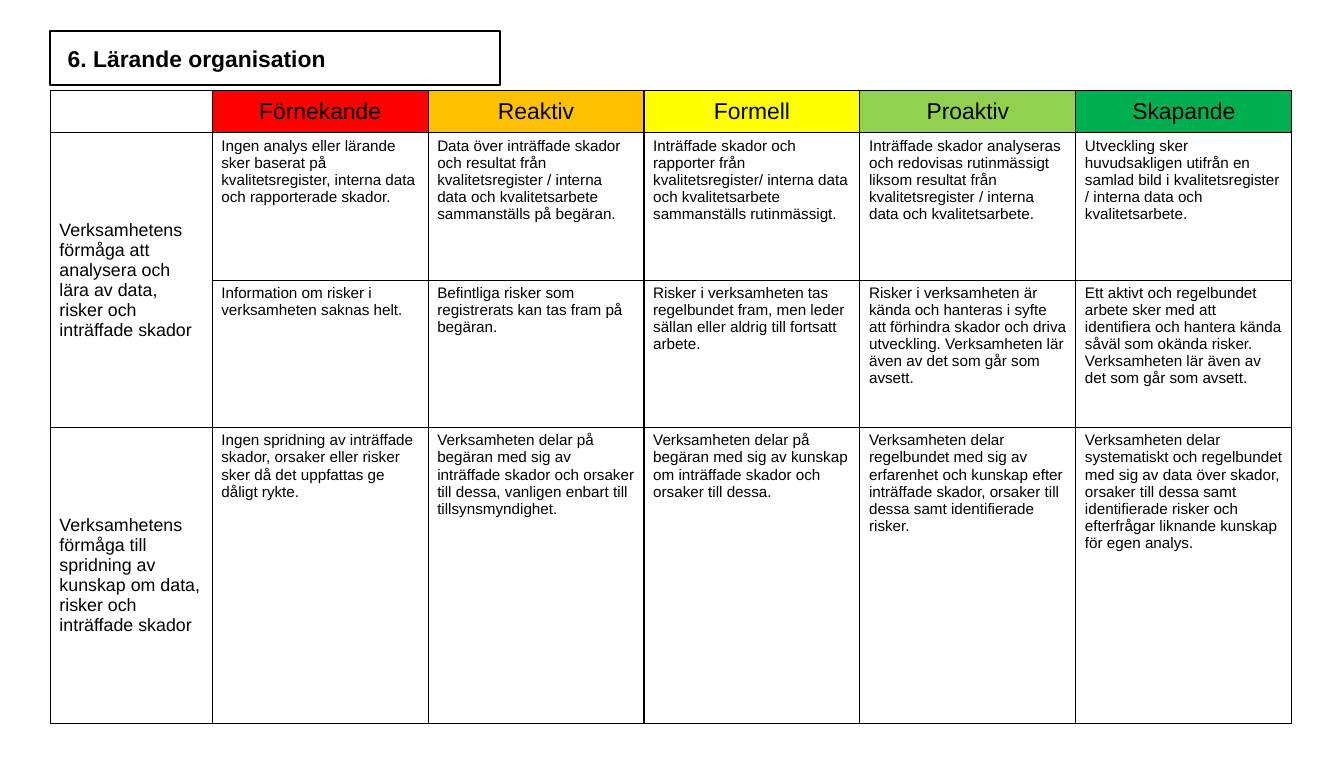
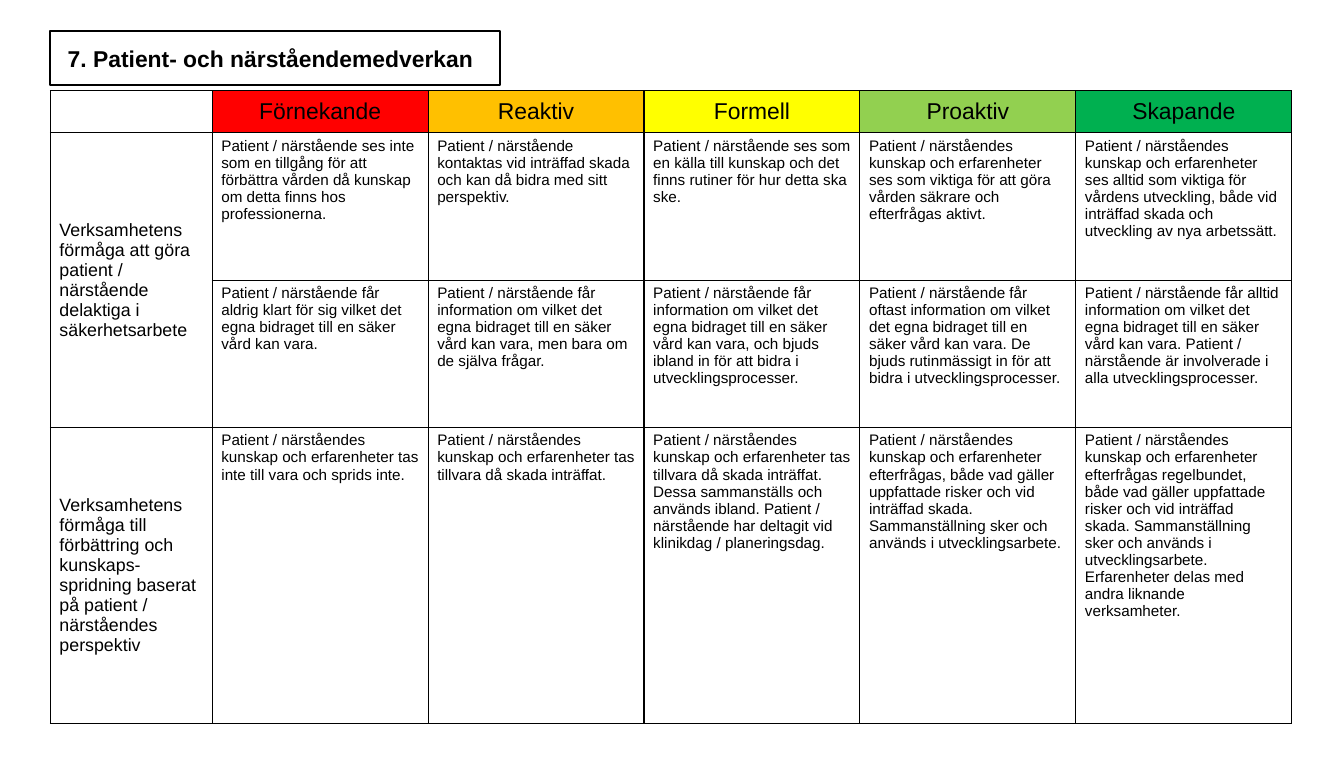
from dataclasses import dataclass

from lxml.etree import SubElement
from pptx import Presentation
from pptx.dml.color import RGBColor
from pptx.enum.shapes import MSO_SHAPE
from pptx.enum.text import MSO_ANCHOR, PP_ALIGN
from pptx.oxml.ns import qn
from pptx.util import Inches, Pt


@dataclass(frozen=True)
class Theme:
    font: str = "Arial"
    ink: str = "000000"
    paper: str = "FFFFFF"
    heading_size: int = 18
    label_size: int = 14
    body_size: int = 12
    title_line: float = 1.5
    grid_line: int = 1


THEME = Theme()
LEFT = Inches(0.55)
LEVELS = [
    ("Förnekande", "FF0000"),
    ("Reaktiv", "FFC000"),
    ("Formell", "FFFF00"),
    ("Proaktiv", "92D050"),
    ("Skapande", "00B050"),
]
COLUMN_WIDTHS = [1.77] + [2.36] * len(LEVELS)
ROW_HEIGHTS = [0.46, 1.61, 1.61, 3.23]
LABEL_ROWS = [1, 3]

PAGES = [
    {
        "title": "6. Lärande organisation",
        "labels": [
            "Verksamhetens förmåga att analysera och lära av data, risker och inträffade skador",
            "Verksamhetens förmåga till spridning av kunskap om data, risker och inträffade skador",
        ],
        "answers": [
            [
                "Ingen analys eller lärande sker baserat på kvalitetsregister, interna data och rapporterade skador.",
                "Data över inträffade skador och resultat från kvalitetsregister / interna data och kvalitetsarbete sammanställs på begäran.",
                "Inträffade skador och rapporter från kvalitetsregister/ interna data och kvalitetsarbete sammanställs rutinmässigt.",
                "Inträffade skador analyseras och redovisas rutinmässigt liksom resultat från kvalitetsregister / interna data och kvalitetsarbete.",
                "Utveckling sker huvudsakligen utifrån en samlad bild i kvalitetsregister / interna data och kvalitetsarbete.",
            ],
            [
                "Information om risker i verksamheten saknas helt.",
                "Befintliga risker som registrerats kan tas fram på begäran.",
                "Risker i verksamheten tas regelbundet fram, men leder sällan eller aldrig till fortsatt arbete.",
                "Risker i verksamheten är kända och hanteras i syfte att förhindra skador och driva utveckling. Verksamheten lär även av det som går som avsett.",
                "Ett aktivt och regelbundet arbete sker med att identifiera och hantera kända såväl som okända risker. Verksamheten lär även av det som går som avsett.",
            ],
            [
                "Ingen spridning av inträffade skador, orsaker eller risker sker då det uppfattas ge dåligt rykte.",
                "Verksamheten delar på begäran med sig av inträffade skador och orsaker till dessa, vanligen enbart till tillsynsmyndighet.",
                "Verksamheten delar på begäran med sig av kunskap om inträffade skador och orsaker till dessa.",
                "Verksamheten delar regelbundet med sig av erfarenhet och kunskap efter inträffade skador, orsaker till dessa samt identifierade risker.",
                "Verksamheten delar systematiskt och regelbundet med sig av data över skador, orsaker till dessa samt identifierade risker och efterfrågar liknande kunskap för egen analys.",
            ],
        ],
    },
    {
        "title": "7. Patient- och närståendemedverkan",
        "labels": [
            "Verksamhetens förmåga att göra patient / närstående delaktiga i säkerhetsarbete",
            "Verksamhetens förmåga till förbättring och kunskaps-spridning baserat på patient / närståendes perspektiv",
        ],
        "answers": [
            [
                "Patient / närstående ses inte som en tillgång för att förbättra vården då kunskap om detta finns hos professionerna.",
                "Patient / närstående kontaktas vid inträffad skada och kan då bidra med sitt perspektiv.",
                "Patient / närstående ses som en källa till kunskap och det finns rutiner för hur detta ska ske.",
                "Patient / närståendes kunskap och erfarenheter ses som viktiga för att göra vården säkrare och efterfrågas aktivt.",
                "Patient / närståendes kunskap och erfarenheter ses alltid som viktiga för vårdens utveckling, både vid inträffad skada och utveckling av nya arbetssätt.",
            ],
            [
                "Patient / närstående får aldrig klart för sig vilket det egna bidraget till en säker vård kan vara.",
                "Patient / närstående får information om vilket det egna bidraget till en säker vård kan vara, men bara om de själva frågar.",
                "Patient / närstående får information om vilket det egna bidraget till en säker vård kan vara, och bjuds ibland in för att bidra i utvecklingsprocesser.",
                "Patient / närstående får oftast information om vilket det egna bidraget till en säker vård kan vara. De bjuds rutinmässigt in för att bidra i utvecklingsprocesser.",
                "Patient / närstående får alltid information om vilket det egna bidraget till en säker vård kan vara. Patient / närstående är involverade i alla utvecklingsprocesser.",
            ],
            [
                "Patient / närståendes kunskap och erfarenheter tas inte till vara och sprids inte.",
                "Patient / närståendes kunskap och erfarenheter tas tillvara då skada inträffat.",
                "Patient / närståendes kunskap och erfarenheter tas tillvara då skada inträffat. Dessa sammanställs och används ibland. Patient / närstående har deltagit vid klinikdag / planeringsdag.",
                "Patient / närståendes kunskap och erfarenheter efterfrågas, både vad gäller uppfattade risker och vid inträffad skada. Sammanställning sker och används i utvecklingsarbete.",
                "Patient / närståendes kunskap och erfarenheter efterfrågas regelbundet, både vad gäller uppfattade risker och vid inträffad skada. Sammanställning sker och används i utvecklingsarbete. Erfarenheter delas med andra liknande verksamheter.",
            ],
        ],
    },
]


def write(frame, text, size, align=PP_ALIGN.LEFT, bold=False):
    para = frame.paragraphs[0]
    para.alignment = align
    span = para.add_run()
    span.text = text
    span.font.name = THEME.font
    span.font.size = Pt(size)
    span.font.bold = bold
    span.font.color.rgb = RGBColor.from_string(THEME.ink)
    return para


def draw_borders(cell):
    properties = cell._tc.get_or_add_tcPr()
    for side in ("lnL", "lnR", "lnT", "lnB"):
        line = SubElement(properties, qn(f"a:{side}"), w=str(Pt(THEME.grid_line)))
        fill = SubElement(line, qn("a:solidFill"))
        SubElement(fill, qn("a:srgbClr"), val=THEME.ink)


deck = Presentation()
deck.slide_width = Inches(14.69)
deck.slide_height = Inches(8.27)

for content in PAGES:
    page = deck.slides.add_slide(deck.slide_layouts[6])

    grid = page.shapes.add_table(
        len(ROW_HEIGHTS), len(COLUMN_WIDTHS), LEFT, Inches(0.99),
        Inches(sum(COLUMN_WIDTHS)), Inches(sum(ROW_HEIGHTS)),
    ).table
    grid.first_row = False
    grid.horz_banding = False
    for column, width in zip(grid.columns, COLUMN_WIDTHS):
        column.width = Inches(width)
    for row, height in zip(grid.rows, ROW_HEIGHTS):
        row.height = Inches(height)
    for cell in grid.iter_cells():
        draw_borders(cell)
        cell.fill.solid()
        cell.fill.fore_color.rgb = RGBColor.from_string(THEME.paper)
    grid.cell(1, 0).merge(grid.cell(2, 0))

    for column, (level, color) in enumerate(LEVELS, start=1):
        cell = grid.cell(0, column)
        cell.fill.fore_color.rgb = RGBColor.from_string(color)
        cell.vertical_anchor = MSO_ANCHOR.MIDDLE
        write(cell.text_frame, level, THEME.heading_size, PP_ALIGN.CENTER)

    for row, label in zip(LABEL_ROWS, content["labels"]):
        cell = grid.cell(row, 0)
        cell.vertical_anchor = MSO_ANCHOR.MIDDLE
        write(cell.text_frame, label, THEME.label_size)

    for row, answers in enumerate(content["answers"], start=1):
        for column, answer in enumerate(answers, start=1):
            write(grid.cell(row, column).text_frame, answer, THEME.body_size)

    box = page.shapes.add_shape(
        MSO_SHAPE.RECTANGLE, LEFT, Inches(0.34), Inches(4.92), Inches(0.59)
    )
    box.shadow.inherit = False
    box.fill.background()
    box.line.color.rgb = RGBColor.from_string(THEME.ink)
    box.line.width = Pt(THEME.title_line)
    frame = box.text_frame
    frame.word_wrap = False
    frame.vertical_anchor = MSO_ANCHOR.MIDDLE
    frame.margin_left = frame.margin_right = frame.margin_top = frame.margin_bottom = 0
    para = write(frame, content["title"], THEME.heading_size, bold=True)
    para._p.get_or_add_pPr().set("marL", str(Inches(0.19)))

deck.save("out.pptx")
